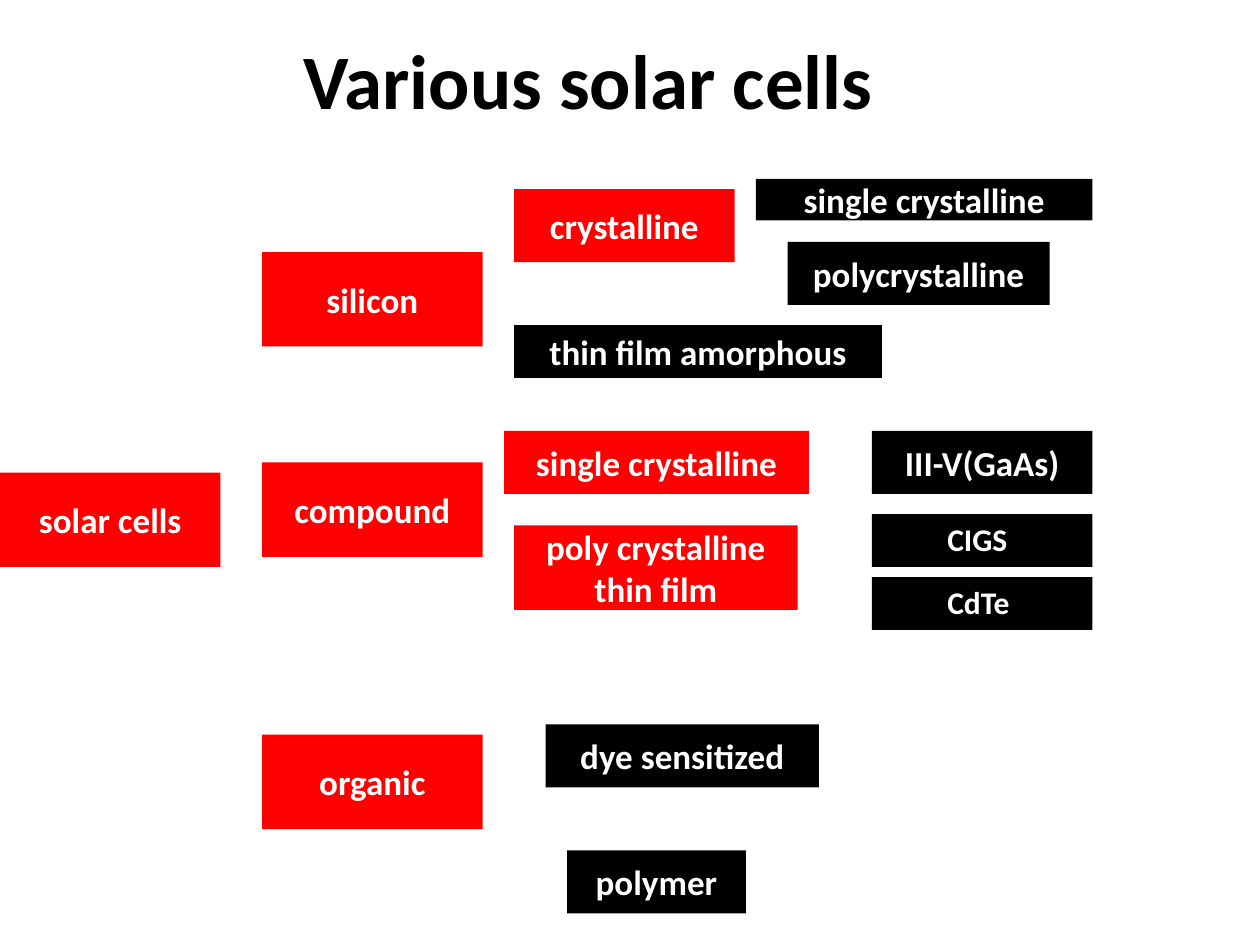
from pptx import Presentation
from pptx import util as u
from pptx.dml.color import RGBColor
from pptx.enum import shapes, text

RED = RGBColor(0xFF, 0x00, 0x00)
BLACK = RGBColor(0x00, 0x00, 0x00)
WHITE = RGBColor(0xFF, 0xFF, 0xFF)


def write(frame, words, size=20, color=WHITE, align=text.PP_ALIGN.CENTER,
          anchor=text.MSO_ANCHOR.MIDDLE, wrap=False, font="Calibri"):
    """Fill a text frame with one paragraph per line of words."""
    frame.word_wrap = wrap
    frame.vertical_anchor = anchor
    for index, line in enumerate(words.split("\n")):
        para = frame.paragraphs[0] if index == 0 else frame.add_paragraph()
        para.alignment = align
        span = para.add_run()
        span.text = line
        span.font.name = font
        span.font.size = u.Pt(size)
        span.font.bold = True
        span.font.color.rgb = color


class Chart:
    """Holds the page and draws the parts of the family tree on it."""

    def __init__(self, page, font="Calibri"):
        self.page = page
        self.font = font

    def block(self, fill, left, top, width, height, words=""):
        box = self.page.shapes.add_shape(
            shapes.MSO_SHAPE.RECTANGLE, u.Inches(left), u.Inches(top),
            u.Inches(width), u.Inches(height))
        box.shadow.inherit = False
        box.fill.solid()
        box.fill.fore_color.rgb = fill
        box.line.fill.background()
        if words:
            write(box.text_frame, words, font=self.font)

    def label(self, left, top, width, height, words, **style):
        box = self.page.shapes.add_textbox(
            u.Inches(left), u.Inches(top), u.Inches(width), u.Inches(height))
        write(box.text_frame, words, font=self.font, **style)


def main():
    deck = Presentation()
    deck.slide_width, deck.slide_height = u.Inches(10), u.Inches(7.5)
    chart = Chart(deck.slides.add_slide(deck.slide_layouts[6]))

    # Title
    chart.label(0.17, 0, 9, 1.25, "Various solar cells",
                size=44, color=BLACK, wrap=True)

    # Root and the three material families
    families = [(0, 3.75, "solar cells"), (2.08, 2, "silicon"),
                (2.08, 3.67, "compound"), (2.08, 5.83, "organic")]
    for left, top, words in families:
        chart.block(RED, left, top, 1.75, 0.75, words)

    # Subgroups that branch further
    subgroups = [(4.08, 1.5, 1.75, 0.58, "crystalline"),
                 (4, 3.42, 2.42, 0.5, "single crystalline"),
                 (4.08, 4.17, 2.25, 0.67, "poly crystalline\nthin film")]
    for subgroup in subgroups:
        chart.block(RED, *subgroup)

    # Final cell types
    cell_types = [(6, 1.42, 2.67, 0.33, "single crystalline"),
                  (6.25, 1.92, 2.08, 0.5, "polycrystalline"),
                  (4.08, 2.58, 2.92, 0.42, "thin film amorphous"),
                  (6.92, 3.42, 1.75, 0.5, "III-V(GaAs)"),
                  (4.33, 5.75, 2.17, 0.5, "dye sensitized"),
                  (4.5, 6.75, 1.42, 0.5, "polymer")]
    for cell_type in cell_types:
        chart.block(BLACK, *cell_type)

    # Thin film compounds: a block with a separate label on top
    for top, words in [(4.08, "CIGS"), (4.58, "CdTe")]:
        chart.block(BLACK, 6.92, top, 1.75, 0.42)
        chart.label(7.42, top, 0.82, 0.4, words, size=18,
                    align=text.PP_ALIGN.LEFT, anchor=text.MSO_ANCHOR.TOP)

    deck.save("out.pptx")


if __name__ == "__main__":
    main()
